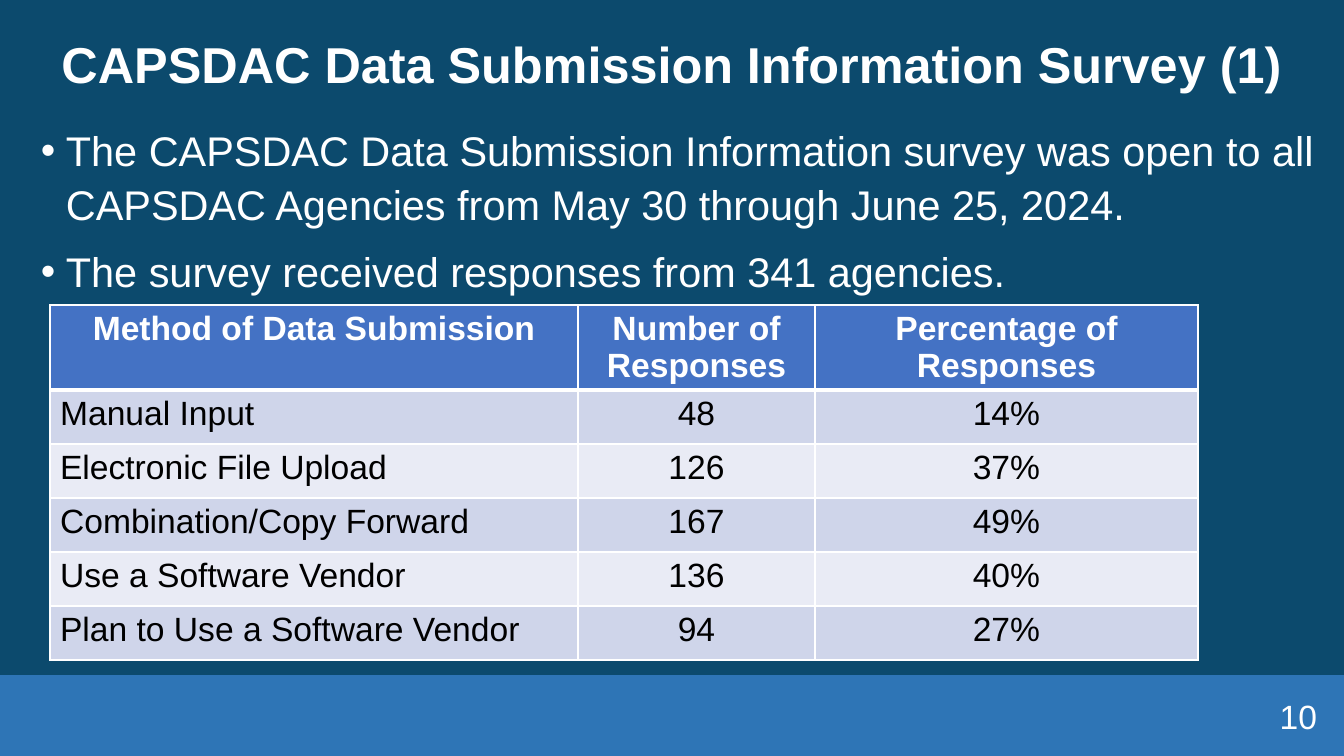
from lxml.etree import SubElement
from pptx import Presentation
from pptx.dml.color import RGBColor
from pptx.enum.shapes import MSO_SHAPE as Shape
from pptx.enum.text import MSO_ANCHOR as Anchor, MSO_AUTO_SIZE as AutoSize, PP_ALIGN as Align
from pptx.oxml import parse_xml
from pptx.oxml.ns import nsdecls, qn
from pptx.util import Emu, Pt

PX = 914400 / 100.8
WIDTH, HEIGHT = 1344, 756
NAVY, BLUE, WHITE, BLACK = "0C4A6D", "2E75B6", "FFFFFF", "000000"
HEADER_FILL, BAND_FILLS = "4472C4", ("CFD5EA", "E9EBF5")

TITLE = "CAPSDAC Data Submission Information Survey (1)"
BULLETS = (
    "The CAPSDAC Data Submission Information survey was open to all "
    "CAPSDAC Agencies from May 30 through June 25, 2024.",
    "The survey received responses from 341 agencies.",
)
ROWS = (
    ("Method of Data Submission", "Number of\nResponses", "Percentage of Responses"),
    ("Manual Input", "48", "14%"),
    ("Electronic File Upload", "126", "37%"),
    ("Combination/Copy Forward", "167", "49%"),
    ("Use a Software Vendor", "136", "40%"),
    ("Plan to Use a Software Vendor", "94", "27%"),
)
COLUMN_WIDTHS = (528, 237, 383)
HEADER_HEIGHT, ROW_HEIGHT = 85, 54


def px(length):
    return Emu(round(length * PX))


def place(box):
    return [px(length) for length in box]


def paint(fill, color):
    fill.solid()
    fill.fore_color.rgb = RGBColor.from_string(color)


def apply(target, values):
    for name, value in values.items():
        setattr(target, name, value)


def write(frame, text, size, color=WHITE, bold=False, **layout):
    frame.text = text
    for para in frame.paragraphs:
        apply(para, layout)
        for span in para.runs:
            apply(span.font, {"name": "Arial", "size": Pt(size), "bold": bold})
            span.font.color.rgb = RGBColor.from_string(color)


def add_text_box(page, box):
    frame = page.shapes.add_textbox(*place(box)).text_frame
    apply(frame, {"word_wrap": True, "auto_size": AutoSize.NONE})
    return frame


def add_title(page, box):
    title = page.shapes.title
    apply(title, dict(zip(("left", "top", "width", "height"), place(box))))
    frame = title.text_frame
    apply(frame, {"word_wrap": True, "auto_size": AutoSize.NONE,
                  "vertical_anchor": Anchor.MIDDLE})
    write(frame, TITLE, 36, bold=True, alignment=Align.CENTER, line_spacing=0.9)


def add_bullets(page, box):
    frame = add_text_box(page, box)
    write(frame, "\n".join(BULLETS), 29.6, line_spacing=Pt(38.4), space_before=Pt(10))
    for para in frame.paragraphs:
        properties = para._p.get_or_add_pPr()
        properties.set("marL", str(px(25)))
        properties.set("indent", str(-px(25)))
        SubElement(properties, qn("a:buFont"), typeface="Arial")
        SubElement(properties, qn("a:buChar"), char="•")


def add_borders(cell, bottom):
    properties = cell._tc.get_or_add_tcPr()
    widths = {"lnL": 1, "lnR": 1, "lnT": 1, "lnB": bottom}
    for index, (side, width) in enumerate(widths.items()):
        properties.insert(index, parse_xml(
            f'<a:{side} {nsdecls("a")} w="{Pt(width)}"><a:solidFill>'
            f'<a:srgbClr val="{WHITE}"/></a:solidFill></a:{side}>'))


def add_survey_table(page, left, top):
    height = HEADER_HEIGHT + ROW_HEIGHT * (len(ROWS) - 1)
    box = (left, top, sum(COLUMN_WIDTHS), height)
    table = page.shapes.add_table(len(ROWS), len(COLUMN_WIDTHS), *place(box)).table
    for column, width in zip(table.columns, COLUMN_WIDTHS):
        column.width = px(width)
    for row_index, texts in enumerate(ROWS):
        header = row_index == 0
        table.rows[row_index].height = px(HEADER_HEIGHT if header else ROW_HEIGHT)
        fill = HEADER_FILL if header else BAND_FILLS[(row_index - 1) % 2]
        for column_index, text in enumerate(texts):
            cell = table.cell(row_index, column_index)
            centred = header or column_index > 0
            write(cell.text_frame, text, 24, WHITE if header else BLACK, header,
                  alignment=Align.CENTER if centred else Align.LEFT)
            paint(cell.fill, fill)
            add_borders(cell, 3 if header else 1)


def add_footer(page, box):
    left, top, width, height = box
    bar = page.shapes.add_shape(Shape.RECTANGLE, *place(box))
    bar.shadow.inherit = False
    paint(bar.fill, BLUE)
    bar.line.fill.background()
    frame = add_text_box(page, (left + width - 319, top + 21, 302, 40))
    frame.vertical_anchor = Anchor.MIDDLE
    write(frame, "10", 24, alignment=Align.RIGHT)


def main():
    deck = Presentation()
    apply(deck, {"slide_width": px(WIDTH), "slide_height": px(HEIGHT)})
    page = deck.slides.add_slide(deck.slide_layouts[5])
    paint(page.background.fill, NAVY)
    add_footer(page, (0, 675, WIDTH, 81))
    add_title(page, (-19, -6, 1382, 146))
    add_bullets(page, (31, 116, 1296, 216))
    add_survey_table(page, 50, 305)
    deck.save("out.pptx")


if __name__ == "__main__":
    main()
